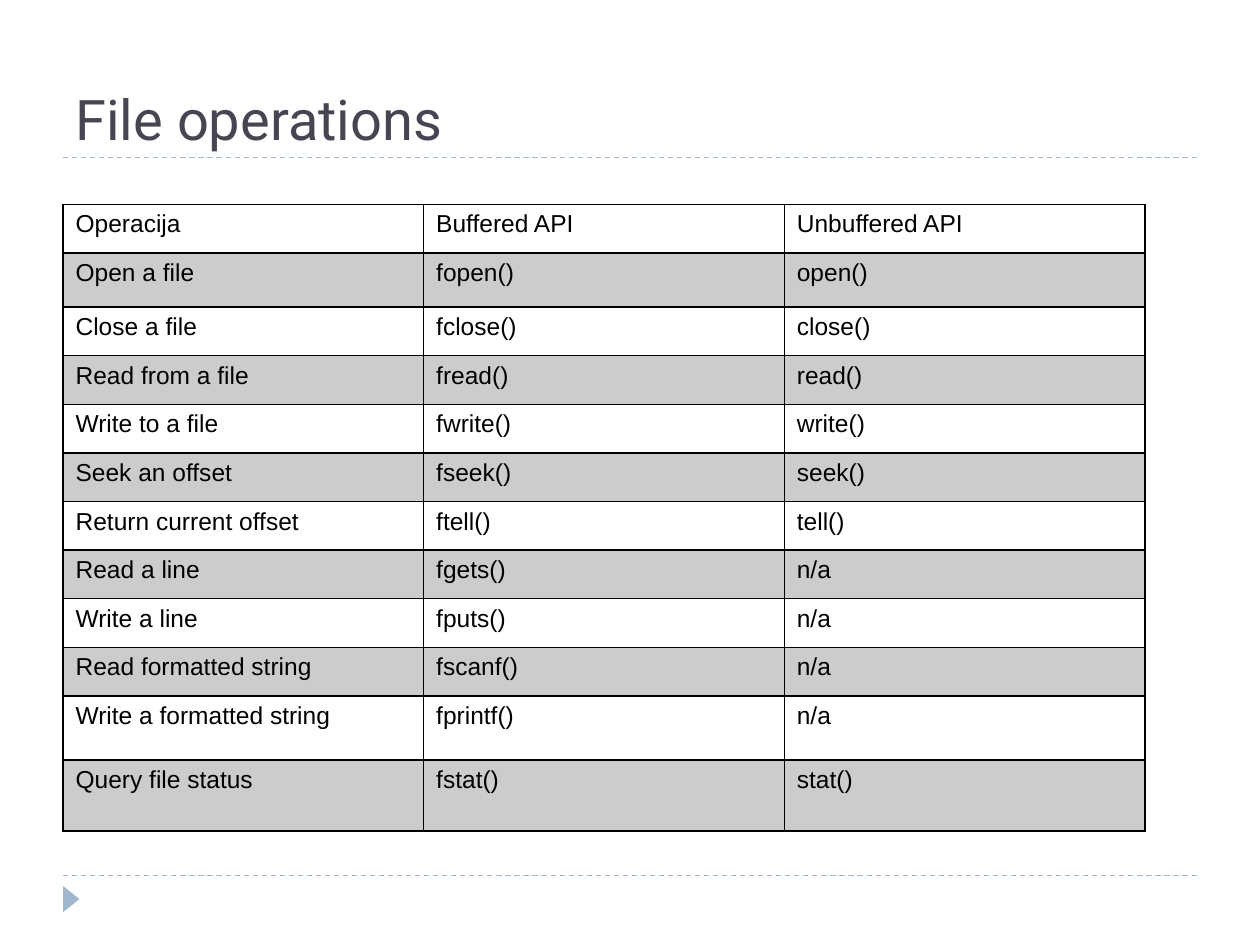
from pptx import Presentation, util as u
from pptx.dml.color import RGBColor
from pptx.enum import dml, shapes, text
from lxml import etree

NS = "http://schemas.openxmlformats.org/drawingml/2006/main"
HUES = {"title": "464653", "accent": "9FB8CD", "ink": "000000"}
ROWS = [
    ("Operacija", "Buffered API", "Unbuffered API"),
    ("Open a file", "fopen()", "open()"),
    ("Close a file", "fclose()", "close()"),
    ("Read from a file", "fread()", "read()"),
    ("Write to a file", "fwrite()", "write()"),
    ("Seek an offset", "fseek()", "seek()"),
    ("Return current offset", "ftell()", "tell()"),
    ("Read a line", "fgets()", "n/a"),
    ("Write a line", "fputs()", "n/a"),
    ("Read formatted string", "fscanf()", "n/a"),
    ("Write a formatted string", "fprintf()", "n/a"),
    ("Query file status", "fstat()", "stat()"),
]
TALL = {1: 1.09, 10: 1.29, 11: 1.43}


def hue(name):
    return RGBColor.from_string(HUES[name])


def style(para, font, size, name):
    para.font.name = font
    para.font.size = u.Pt(size)
    para.font.color.rgb = hue(name)


deck = Presentation()
deck.slide_width, deck.slide_height = u.Cm(25.4), u.Cm(19.05)
slide = deck.slides.add_slide(deck.slide_layouts[6])

for y in (17.65, 3.18):
    rule = slide.shapes.add_connector(
        shapes.MSO_CONNECTOR.STRAIGHT, u.Cm(1.27), u.Cm(y), u.Cm(24.13), u.Cm(y))
    rule.line.color.rgb = hue("accent")
    rule.line.width = u.Pt(0.75)
    rule.line.dash_style = dml.MSO_LINE.DASH
    etree.SubElement(rule._element.spPr, f"{{{NS}}}effectLst")

mark = slide.shapes.add_shape(
    shapes.MSO_SHAPE.ISOSCELES_TRIANGLE, u.Cm(1.17), u.Cm(17.96), u.Cm(0.53), u.Cm(0.33))
mark.rotation = 90
mark.shadow.inherit = False
mark.fill.solid()
mark.fill.fore_color.rgb = hue("accent")
mark.line.fill.background()

title = slide.shapes.add_textbox(u.Cm(1.27), u.Cm(0.43), u.Cm(22.86), u.Cm(2.75)).text_frame
title.word_wrap = True
title.vertical_anchor = text.MSO_ANCHOR.BOTTOM
title.text = "File operations"
style(title.paragraphs[0], "Roboto", 32, "title")

table = slide.shapes.add_table(
    len(ROWS), 3, u.Cm(1.27), u.Cm(4.12), u.Cm(21.82), u.Cm(12.6)).table
table.first_row = table.horz_banding = False
for col in table.columns:
    col.width = u.Cm(7.27)

for r, row in enumerate(ROWS):
    table.rows[r].height = u.Cm(TALL.get(r, 0.98))
    for c, label in enumerate(row):
        cell = table.cell(r, c)
        cell.text = label
        style(cell.text_frame.paragraphs[0], "Arial", 14, "ink")
        props = cell._tc.get_or_add_tcPr()
        if r % 2:
            cell.fill.solid()
            cell.fill.fore_color.rgb = hue("ink")
            tint = props.find(f".//{{{NS}}}srgbClr")
            etree.SubElement(tint, f"{{{NS}}}alpha", val="20000")
        else:
            cell.fill.background()
        for i, side in enumerate("LRTB"):
            edge = etree.Element(f"{{{NS}}}ln{side}", w=str(u.Pt(0.96)))
            fill = etree.SubElement(edge, f"{{{NS}}}solidFill")
            etree.SubElement(fill, f"{{{NS}}}srgbClr", val=HUES["ink"])
            props.insert(i, edge)

deck.save("out.pptx")
